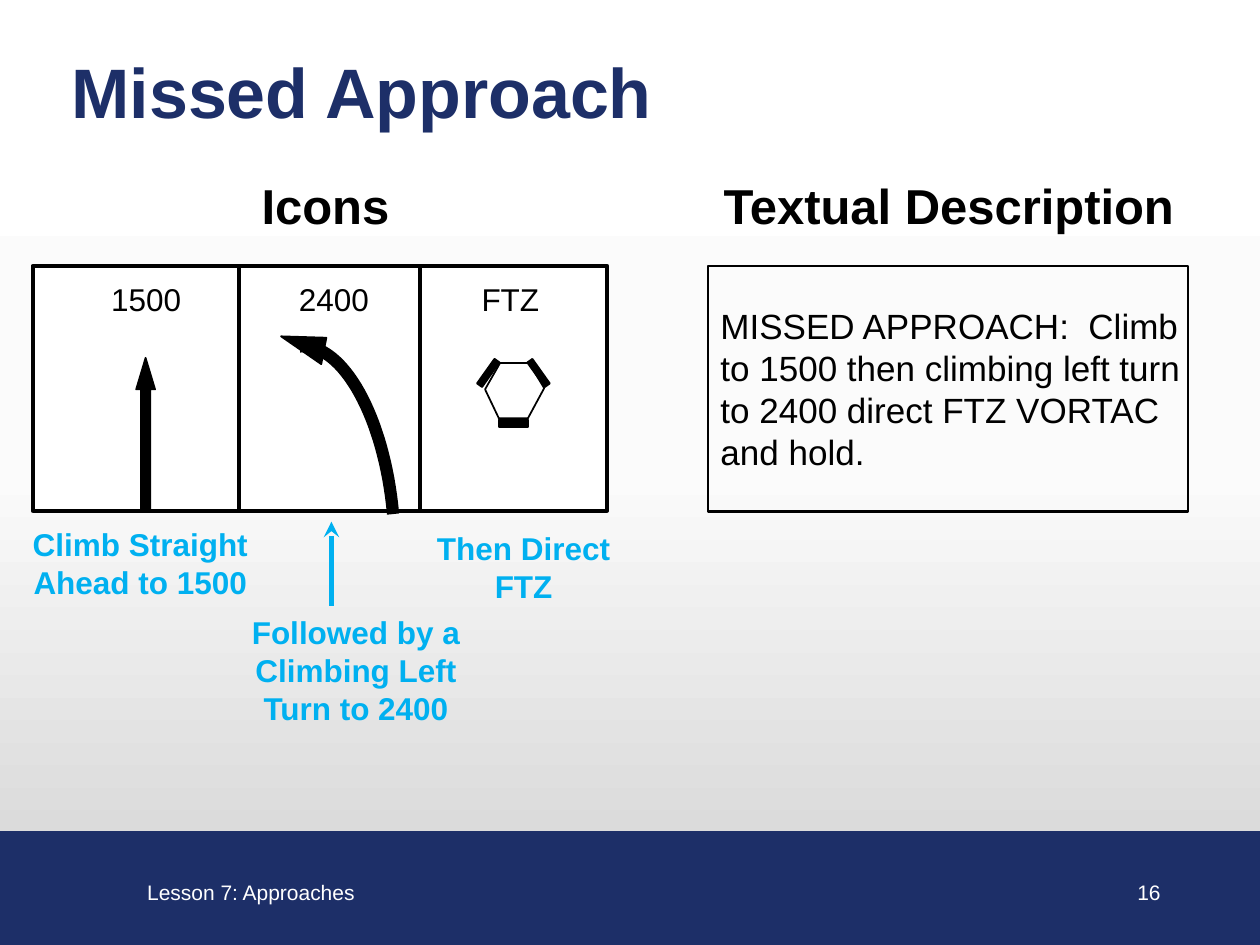
from pptx import Presentation
from pptx.dml.color import RGBColor
from pptx.enum.shapes import MSO_CONNECTOR, MSO_SHAPE
from pptx.enum.text import MSO_ANCHOR, PP_ALIGN
from pptx.oxml import parse_xml
from pptx.oxml.ns import nsdecls, qn
from pptx.util import Pt

RECT, UP_ARROW = MSO_SHAPE.RECTANGLE, MSO_SHAPE.UP_ARROW
LEFT, CENTER, RIGHT = PP_ALIGN.LEFT, PP_ALIGN.CENTER, PP_ALIGN.RIGHT
MIDDLE, TOP = MSO_ANCHOR.MIDDLE, MSO_ANCHOR.TOP
NAVY, SKY, BLACK, WHITE = "1D2F68", "00B0F0", "000000", "FFFFFF"

BACKGROUND = [(0, "FFFFFF"), (50, "FBFBFB"), (100, "D0D0D0")]

STYLES = {
    "title": dict(size=40, color=NAVY, bold=True, align=LEFT, anchor=MIDDLE),
    "heading": dict(size=28, color=BLACK, bold=True, align=CENTER, anchor=TOP),
    "icon": dict(size=18, color=BLACK, bold=False, align=CENTER, anchor=TOP),
    "caption": dict(size=18, color=SKY, bold=True, align=CENTER, anchor=TOP),
    "body": dict(size=20, color=BLACK, bold=False, align=LEFT, anchor=MIDDLE),
    "footer": dict(size=12, color=WHITE, bold=False, align=LEFT, anchor=TOP),
    "number": dict(size=12, color=WHITE, bold=False, align=RIGHT, anchor=TOP),
}

TEXTS = [
    ("Lesson 7: Approaches", "footer", (77, 499, 134, 21.6)),
    ("16", "number", (625.7, 499, 44.6, 21.6)),
    ("Missed Approach", "title", (33.8, 27.4, 667.4, 48.2)),
    ("Icons", "heading", (100, 96.5, 172, 41)),
    ("Textual Description", "heading", (390.2, 97, 304, 41)),
    ("1500", "icon", (42.5, 156.2, 82, 29)),
    ("2400", "icon", (161.3, 156.2, 59, 29)),
    ("FTZ", "icon", (265.7, 156.2, 52, 29)),
    ("Climb Straight Ahead to 1500", "caption", (-5.8, 296.6, 172, 51)),
    ("Followed by a Climbing Left Turn to 2400", "caption", (129.6, 347, 147.6, 72.7)),
    ("Then Direct FTZ", "caption", (236.2, 298.8, 126, 51)),
]

DESCRIPTION = ("MISSED APPROACH:  Climb to 1500 then climbing left turn "
               "to 2400 direct FTZ VORTAC and hold.")
DESCRIPTION_BOX = (404.6, 151.9, 274.3, 140.4)

PANEL_LEFT, PANEL_TOP, PANEL_HEIGHT = 18.7, 151.9, 139.9
PANEL_WIDTHS = [118.1, 103, 107.2]

CLIMB_ARROW = (77.8, 204.5, 10.8, 87.1)
TURN_CURVE = [(224.6, 293.8), (219.6, 238.3), (195.8, 195.8), (171.4, 198)]
TURN_HEAD = [(186.5, 193), (183.6, 208.1), (160.6, 192.2)]
VORTAC = [(285.8, 207.4), (302.4, 207.4), (311, 221.8),
          (301.7, 239), (285.1, 239), (277.2, 222.5)]
VORTAC_BARS = [
    ((277.2, 204.5, 3.6, 17.3), 35.4),
    ((306, 204.5, 3.6, 17.3), -35.4),
    ((285.1, 239.8, 16.6, 4.3), 0),
]
POINTER = [(189.4, 346.3), (189.4, 298.1)]


def rgb(value):
    return RGBColor.from_string(value)


def paint(sp, fill, line, width):
    sp.shadow.inherit = False
    if fill:
        sp.fill.solid()
        sp.fill.fore_color.rgb = rgb(fill)
    else:
        sp.fill.background()
    sp.line.color.rgb = rgb(line)
    sp.line.width = Pt(width)


def add_preset(s, kind, box, fill, line, width):
    sp = s.shapes.add_shape(kind, *map(Pt, box))
    paint(sp, fill, line, width)
    return sp


def add_outline(s, points, closed, fill, width):
    corners = [(Pt(x), Pt(y)) for x, y in points]
    builder = s.shapes.build_freeform(*corners[0])
    builder.add_line_segments(corners[1:], close=closed)
    paint(builder.convert_to_shape(), fill, BLACK, width)


def write(sp, text, style, wrap=True):
    fmt = STYLES[style]
    tf = sp.text_frame
    tf.word_wrap = wrap
    tf.vertical_anchor = fmt["anchor"]
    p = tf.paragraphs[0]
    p.alignment = fmt["align"]
    r = p.add_run()
    r.text = text
    font = dict(name="Arial", size=Pt(fmt["size"]), bold=fmt["bold"])
    for key, value in font.items():
        setattr(r.font, key, value)
    r.font.color.rgb = rgb(fmt["color"])


def bezier(a, b, c, d, steps=32):
    for i in range(steps + 1):
        t = i / steps
        u = 1 - t
        yield tuple(u**3 * w + 3 * u * u * t * x + 3 * u * t * t * y + t**3 * z
                    for w, x, y, z in zip(a, b, c, d))


def set_background(s):
    fill = s.background.fill
    fill.gradient()
    fill.gradient_angle = 270
    stops = next(s.background._cSld.iter(qn("a:gsLst")))
    for stop in list(stops):
        stops.remove(stop)
    for position, color in BACKGROUND:
        stops.append(parse_xml(
            f'<a:gs {nsdecls("a")} pos="{position * 1000}">'
            f'<a:srgbClr val="{color}"/></a:gs>'))


def add_pointer(s):
    (x1, y1), (x2, y2) = POINTER
    line = s.shapes.add_connector(MSO_CONNECTOR.STRAIGHT, Pt(x1), Pt(y1), Pt(x2), Pt(y2))
    line.line.color.rgb = rgb(SKY)
    line.line.width = Pt(3)
    line.line._get_or_add_ln().append(
        parse_xml(f'<a:tailEnd {nsdecls("a")} type="stealth"/>'))
    line._element.spPr.append(parse_xml(f'<a:effectLst {nsdecls("a")}/>'))


def main():
    prs = Presentation()
    prs.slide_width, prs.slide_height = Pt(720), Pt(540)
    s = prs.slides.add_slide(prs.slide_layouts[6])
    set_background(s)
    add_preset(s, RECT, (-1.4, 475.2, 721.4, 64.8), NAVY, NAVY, 0.75)

    left = PANEL_LEFT
    for width in PANEL_WIDTHS:
        add_preset(s, RECT, (left, PANEL_TOP, width, PANEL_HEIGHT), WHITE, BLACK, 2.25)
        left += width

    arrow = add_preset(s, UP_ARROW, CLIMB_ARROW, BLACK, BLACK, 1)
    arrow.adjustments[0], arrow.adjustments[1] = 0.5, 1.667
    add_outline(s, list(bezier(*TURN_CURVE)), False, None, 7)
    add_outline(s, TURN_HEAD, True, BLACK, 1)
    add_outline(s, VORTAC, True, None, 1)
    for box, angle in VORTAC_BARS:
        add_preset(s, RECT, box, BLACK, BLACK, 1).rotation = angle

    add_pointer(s)
    sp = add_preset(s, RECT, DESCRIPTION_BOX, None, BLACK, 1.5)
    write(sp, DESCRIPTION, "body")
    sp.text_frame.margin_right = Pt(1.4)
    for text, style, box in TEXTS:
        write(s.shapes.add_textbox(*map(Pt, box)), text, style, style != "footer")
    prs.save("out.pptx")


if __name__ == "__main__":
    main()
